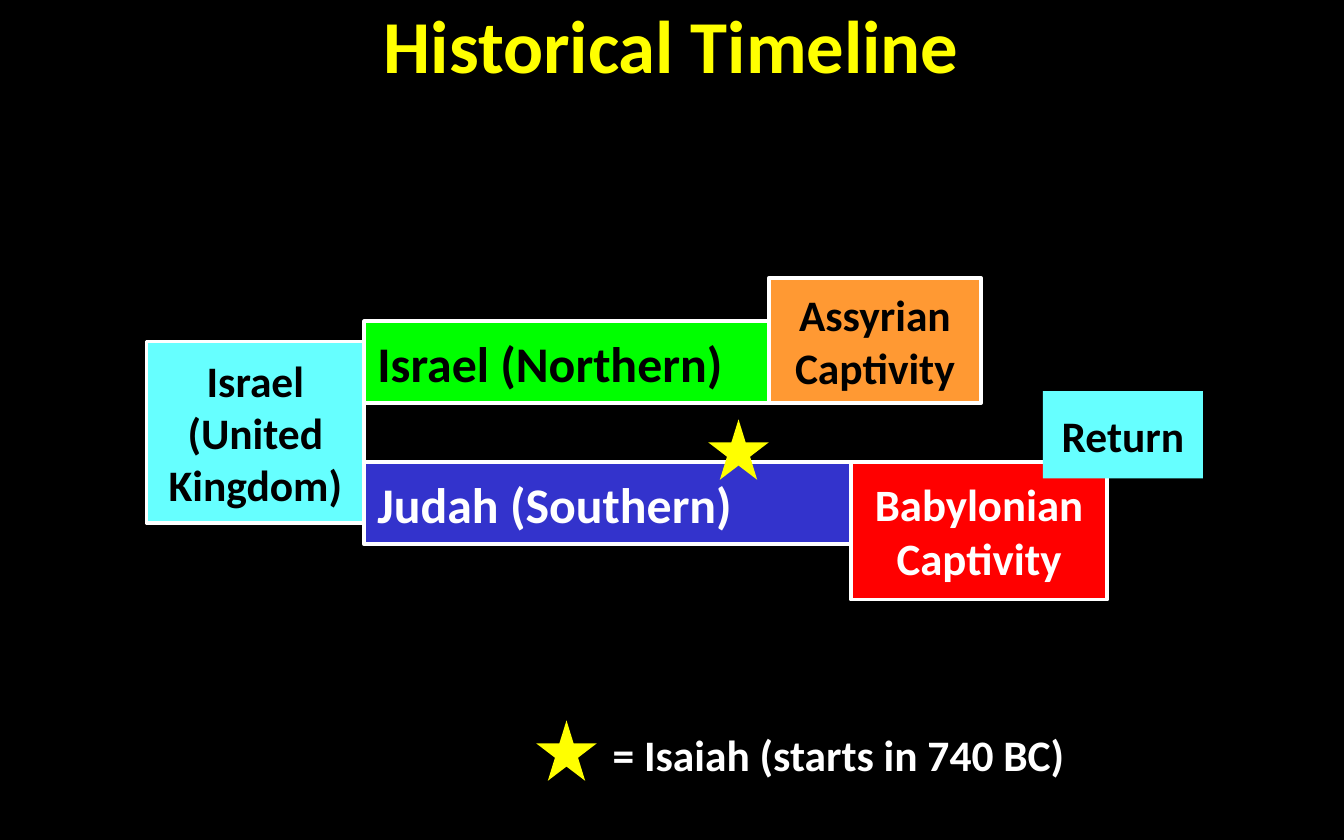
import pptx
import pptx.util
import pptx.dml.color
import pptx.enum.shapes
import pptx.enum.text
from dataclasses import dataclass

Inches = pptx.util.Inches
Pt = pptx.util.Pt
Kind = pptx.enum.shapes.MSO_SHAPE
Align = pptx.enum.text.PP_ALIGN
Anchor = pptx.enum.text.MSO_ANCHOR


@dataclass(frozen=True)
class Theme:
    font: str = "Calibri"
    black: str = "000000"
    white: str = "FFFFFF"
    yellow: str = "FFFF00"
    green: str = "00FF00"
    blue: str = "3333CC"
    orange: str = "FF9933"
    red: str = "FF0000"
    cyan: str = "66FFFF"
    title: float = 40
    realm: float = 26.7
    exile: float = 24
    label: float = 23.3
    line: float = 2


THEME = Theme()


def paint(fill, color):
    fill.solid()
    fill.fore_color.rgb = pptx.dml.color.RGBColor.from_string(color)


def write(frame, text, size, color, align=Align.CENTER, anchor=Anchor.MIDDLE):
    frame.word_wrap = True
    frame.vertical_anchor = anchor
    para = frame.paragraphs[0]
    para.text = text
    para.alignment = align
    para.font.name = THEME.font
    para.font.size = Pt(size)
    para.font.bold = True
    paint(para.font.fill, color)


def add_form(slide, kind, box, color, edge=False):
    form = slide.shapes.add_shape(kind, *map(Inches, box))
    form.shadow.inherit = False
    paint(form.fill, color)
    if edge:
        paint(form.line.fill, THEME.white)
        form.line.width = Pt(THEME.line)
    else:
        form.line.fill.background()
    return form


def add_star(slide, left, top):
    add_form(slide, Kind.STAR_5_POINT, (left, top, 0.45, 0.45), THEME.yellow)


def add_title(slide, box):
    title = slide.shapes.title
    title.left, title.top, title.width, title.height = map(Inches, box)
    write(title.text_frame, "Historical Timeline", THEME.title, THEME.yellow)


def add_eras(slide, box):
    """Draw the kingdoms, exiles and return; the box spans all eras."""
    left, top, width, height = box
    t = THEME
    split = 1.62            # end of the united kingdom
    north = 4.63            # fall of the northern kingdom
    south = 1.37            # top of the southern row
    eras = [
        ("Israel (Northern)", split, 0.32, north - split, 0.61,
         t.green, t.black, t.realm, Align.LEFT, True),
        ("Judah (Southern)", split, south, 4.17, 0.61,
         t.blue, t.white, t.realm, Align.LEFT, True),
        ("Assyrian Captivity", north, 0, 1.58, 0.93,
         t.orange, t.black, t.label, Align.CENTER, True),
        ("Babylonian Captivity", 5.24, south, 1.91, height - south,
         t.red, t.white, t.exile, Align.CENTER, True),
        ("Israel (United Kingdom)", 0, 0.47, split, 1.35,
         t.cyan, t.black, t.label, Align.CENTER, True),
        ("Return", width - 1.19, 0.84, 1.19, 0.65,
         t.cyan, t.black, t.label, Align.CENTER, False),
    ]
    for text, x, y, w, h, fill, ink, size, align, edge in eras:
        form = add_form(slide, Kind.RECTANGLE, (left + x, top + y, w, h), fill, edge)
        write(form.text_frame, text, size, ink, align)
    add_star(slide, left + north - 0.45, top + 1.05)


def add_key(slide, box):
    left, top, width, height = box
    add_star(slide, left, top)
    note = slide.shapes.add_textbox(
        Inches(left + 0.47), Inches(top + 0.01), Inches(width - 0.47), Inches(height - 0.01))
    write(note.text_frame, "= Isaiah (starts in 740 BC)", THEME.label,
          THEME.white, Align.LEFT, Anchor.TOP)


def main():
    deck = pptx.Presentation()
    deck.slide_width, deck.slide_height = Inches(10), Inches(6.25)
    slide = deck.slides.add_slide(deck.slide_layouts[5])
    paint(slide.background.fill, THEME.black)
    add_title(slide, (0.96, 0, 8.07, 0.65))
    add_eras(slide, (1.09, 2.07, 7.86, 2.39))
    add_key(slide, (3.99, 5.36, 4.49, 0.5))
    deck.save("out.pptx")


if __name__ == "__main__":
    main()
